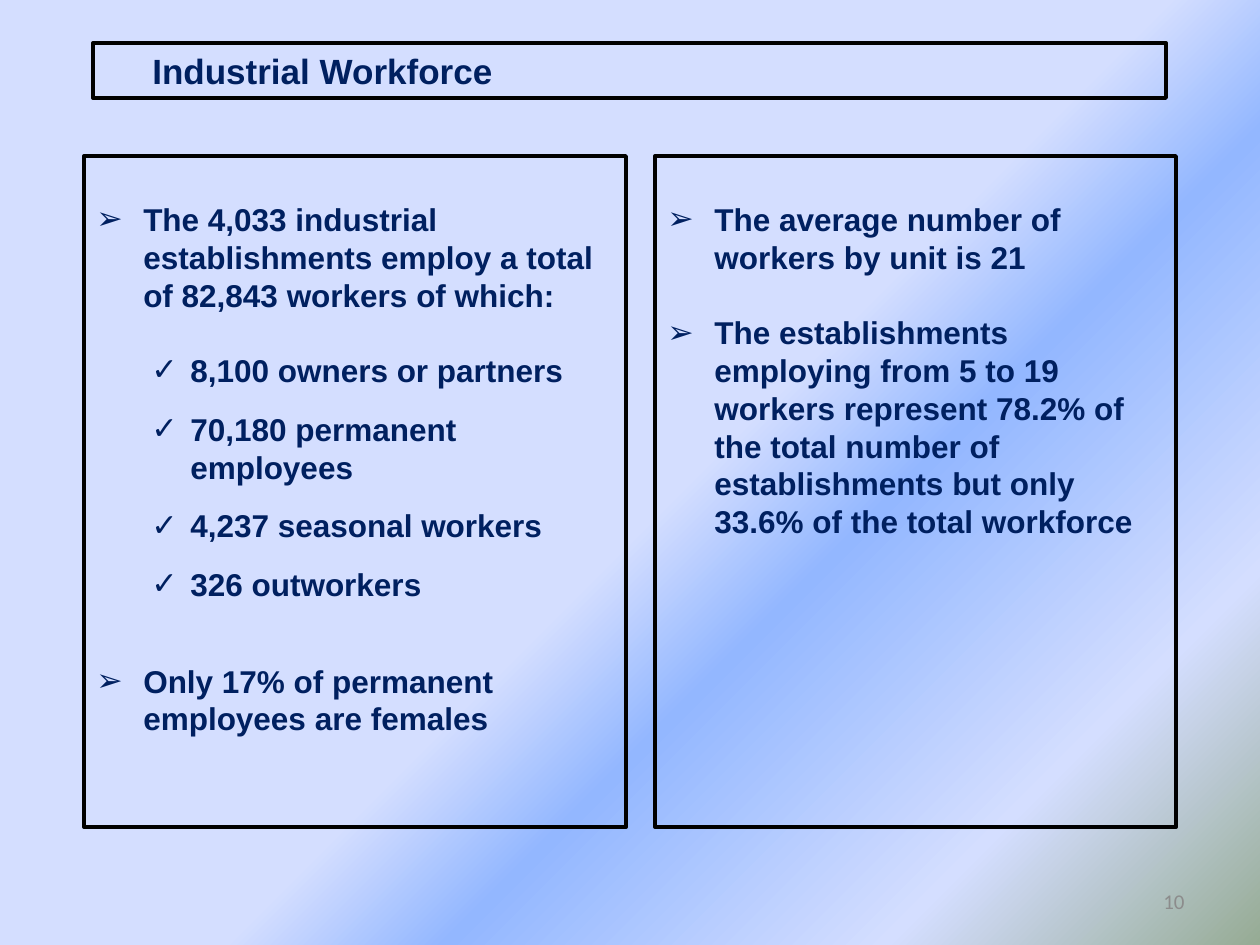
from lxml.etree import SubElement
from pptx import Presentation
from pptx.dml.color import RGBColor
from pptx.enum.shapes import MSO_SHAPE
from pptx.enum.text import MSO_ANCHOR, PP_ALIGN
from pptx.oxml.ns import qn
from pptx.util import Emu, Pt

NAVY = RGBColor(0x00, 0x20, 0x60)
BLACK = RGBColor(0x00, 0x00, 0x00)
GRAY = RGBColor(0x8C, 0x8C, 0x8C)
PALE_BLUE = RGBColor(0xD4, 0xDE, 0xFF)
SKY_BLUE = RGBColor(0x93, 0xB7, 0xFF)
SAGE = RGBColor(0x96, 0xAB, 0x94)

EMU_PER_PX = 914400 / 126
BLANK_LAYOUT = 6
LINE_GAP = 21.5
BACKGROUND_STOPS = [(53, PALE_BLUE), (63, SKY_BLUE), (83, PALE_BLUE), (100, SAGE)]

MAIN = dict(bullet="➢", margin=47, indent=-47)
SPACED = dict(MAIN, before=LINE_GAP)
CHECK = dict(bullet="✓", margin=94, indent=-39, after=12)
WORKER_POINTS = [
    ("The 4,033 industrial establishments employ a total of 82,843 workers of which:", MAIN),
    ("8,100 owners or partners", dict(CHECK, before=LINE_GAP)),
    ("70,180 permanent employees", CHECK),
    ("4,237 seasonal workers", CHECK),
    ("326 outworkers", CHECK),
    ("Only 17% of permanent employees are females", SPACED),
]
SIZE_POINTS = [
    ("The average number of workers by unit is 21", MAIN),
    ("The establishments employing from 5 to 19 workers represent 78.2% of the total "
     "number of establishments but only 33.6% of the total workforce", SPACED),
]


def px(length):
    return Emu(round(length * EMU_PER_PX))


def write_paragraph(paragraph, text, size=18, font="Arial", color=NAVY, bold=True,
                    align=PP_ALIGN.LEFT, bullet=None, margin=0, indent=0, before=0, after=0):
    run = paragraph.add_run()
    run.text = text
    run.font.size = Pt(size)
    run.font.name = font
    run.font.bold = bold
    run.font.color.rgb = color
    paragraph.alignment = align
    paragraph.space_before = Pt(before)
    paragraph.space_after = Pt(after)
    properties = paragraph._p.get_or_add_pPr()
    properties.set("marL", str(px(margin)))
    properties.set("indent", str(px(indent)))
    if bullet:
        SubElement(properties, qn("a:buFont"), typeface="Arial")
        SubElement(properties, qn("a:buChar"), char=bullet)


class SlideBuilder:
    """Holds the style and the current slide, and adds each kind of element."""

    def __init__(self, slide, line_color=BLACK, line_width=2.25):
        self.slide = slide
        self.line_color = line_color
        self.line_width = line_width

    def background(self, stops, angle):
        fill = self.slide.background.fill
        fill.gradient()
        fill.gradient_angle = -angle % 360
        stop_list = fill._fill._gradFill.find(qn("a:gsLst"))
        for stop in list(stop_list):
            stop_list.remove(stop)
        for position, color in stops:
            stop = SubElement(stop_list, qn("a:gs"), pos=str(position * 1000))
            SubElement(stop, qn("a:srgbClr"), val=str(color))

    def fill_text(self, shape, entries, anchor, top_inset=6):
        frame = shape.text_frame
        frame.word_wrap = True
        frame.vertical_anchor = anchor
        frame.margin_top = px(top_inset)
        for index, (text, style) in enumerate(entries):
            paragraph = frame.add_paragraph() if index else frame.paragraphs[0]
            write_paragraph(paragraph, text, **style)

    def panel(self, left, top, width, height, entries, top_inset=6):
        shape = self.slide.shapes.add_shape(
            MSO_SHAPE.RECTANGLE, px(left), px(top), px(width), px(height))
        shape.shadow.inherit = False
        shape.fill.background()
        shape.line.color.rgb = self.line_color
        shape.line.width = Pt(self.line_width)
        self.fill_text(shape, entries, MSO_ANCHOR.TOP, top_inset)

    def label(self, left, top, width, height, text, **style):
        box = self.slide.shapes.add_textbox(px(left), px(top), px(width), px(height))
        self.fill_text(box, [(text, style)], MSO_ANCHOR.MIDDLE)


def main():
    presentation = Presentation()
    presentation.slide_width = px(1260)
    presentation.slide_height = px(945)
    slide = presentation.slides.add_slide(presentation.slide_layouts[BLANK_LAYOUT])
    builder = SlideBuilder(slide)
    builder.background(BACKGROUND_STOPS, angle=45)
    builder.label(903, 876, 294, 50, "10", size=12, font="Calibri", color=GRAY,
                  bold=False, align=PP_ALIGN.RIGHT)
    builder.panel(84, 156, 542, 671, WORKER_POINTS, top_inset=44)
    builder.panel(655, 156, 521, 671, SIZE_POINTS, top_inset=44)
    builder.panel(93, 43, 1073, 55, [("Industrial Workforce", dict(size=20, margin=47))])
    presentation.save("out.pptx")


if __name__ == "__main__":
    main()
